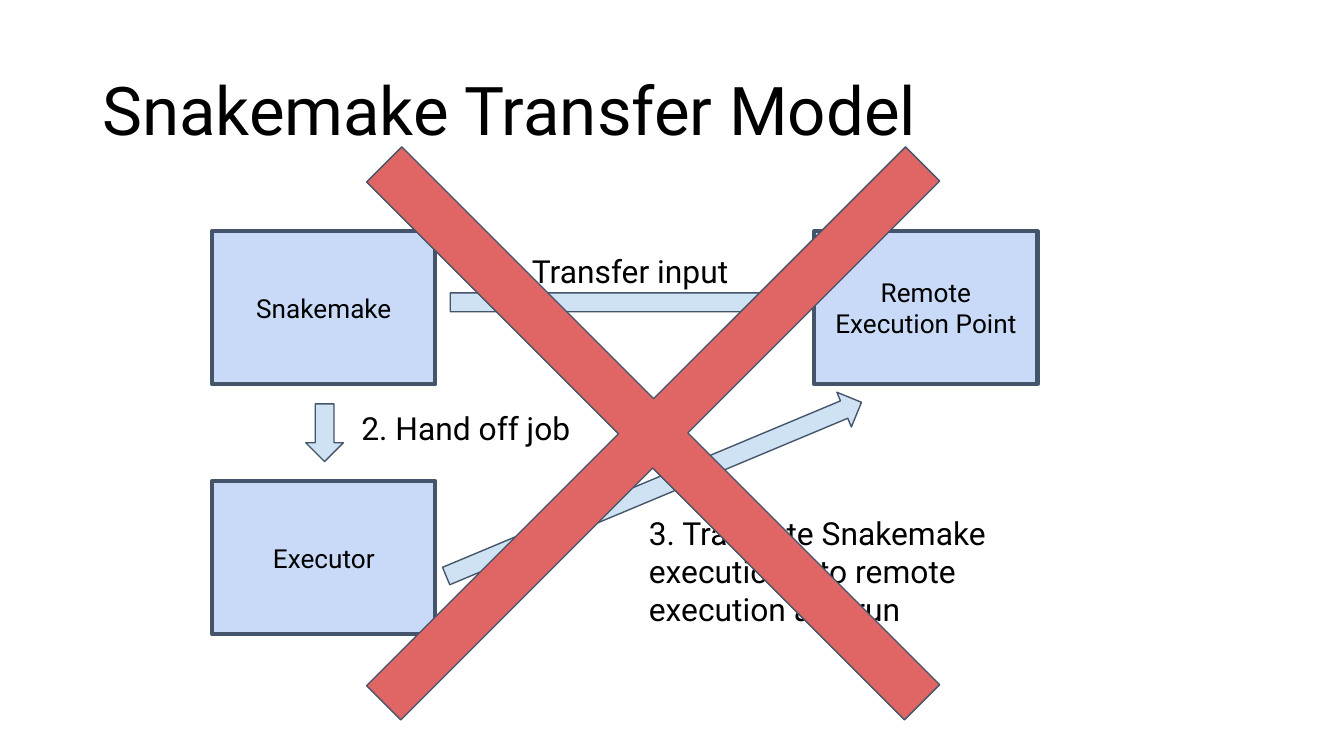
from dataclasses import dataclass

from pptx import Presentation
from pptx.dml.color import RGBColor
from pptx.enum.shapes import MSO_SHAPE
from pptx.enum.text import MSO_ANCHOR, PP_ALIGN
from pptx.util import Inches, Pt

COLORS = {
    "text": "000000",
    "outline": "44546A",
    "component": "C9DAF8",
    "arrow": "CFE2F3",
    "cross": "E06666",
}
FONT = "Roboto"


@dataclass(frozen=True)
class Area:
    left: float
    top: float
    width: float
    height: float

    def lengths(self) -> list:
        return [Inches(v) for v in (self.left, self.top, self.width, self.height)]


@dataclass(frozen=True)
class Figure:
    kind: MSO_SHAPE
    area: Area
    color: str
    rotation: float = 0
    adjustment: float | None = None
    line_width: float = 0.75


@dataclass(frozen=True)
class Label:
    text: str
    area: Area
    size: int = 17
    anchor: MSO_ANCHOR = MSO_ANCHOR.MIDDLE
    inset_x: float = 0.1
    inset_y: float = 0.1
    line_spacing: float = 1.0


def write(shape, text: str, size: int, anchor: MSO_ANCHOR, align: PP_ALIGN,
          inset_x: float = 0.1, inset_y: float = 0.1, line_spacing: float = 1.0) -> None:
    frame = shape.text_frame
    frame.word_wrap = True
    frame.vertical_anchor = anchor
    frame.margin_left = frame.margin_right = Inches(inset_x)
    frame.margin_top = frame.margin_bottom = Inches(inset_y)
    paragraph = frame.paragraphs[0]
    paragraph.alignment = align
    paragraph.line_spacing = line_spacing
    run = paragraph.add_run()
    run.text = text
    run.font.name = FONT
    run.font.size = Pt(size)
    run.font.color.rgb = RGBColor.from_string(COLORS["text"])


def draw_figure(slide, figure: Figure):
    shape = slide.shapes.add_shape(figure.kind, *figure.area.lengths())
    shape.shadow.inherit = False
    shape.rotation = figure.rotation
    shape.fill.solid()
    shape.fill.fore_color.rgb = RGBColor.from_string(COLORS[figure.color])
    shape.line.color.rgb = RGBColor.from_string(COLORS["outline"])
    shape.line.width = Pt(figure.line_width)
    if figure.adjustment is not None:
        shape.adjustments[0] = figure.adjustment
    return shape


def draw_component(slide, name: str, left: float, top: float) -> None:
    box = Figure(MSO_SHAPE.RECTANGLE, Area(left, top, 1.66, 1.14), "component", line_width=2.25)
    write(draw_figure(slide, box), name, 14, MSO_ANCHOR.MIDDLE, PP_ALIGN.CENTER)


def draw_arrow(slide, area: Area, rotation: float = 0) -> None:
    draw_figure(slide, Figure(MSO_SHAPE.RIGHT_ARROW, area, "arrow", rotation))


def draw_cross(slide, area: Area, band: float) -> None:
    notch = (1 - band / area.width) / 2
    draw_figure(slide, Figure(MSO_SHAPE.CROSS, area, "cross", 45, notch))


def draw_label(slide, label: Label) -> None:
    box = slide.shapes.add_textbox(*label.area.lengths())
    write(box, label.text, label.size, label.anchor, PP_ALIGN.LEFT,
          label.inset_x, label.inset_y, label.line_spacing)


def main() -> None:
    presentation = Presentation()
    presentation.slide_width = Inches(10)
    presentation.slide_height = Inches(10 * 9 / 16)
    slide = presentation.slides.add_slide(presentation.slide_layouts[6])

    local_left, remote_left = 1.58, 6.06
    upper_top, lower_top = 1.72, 3.58

    draw_label(slide, Label("Snakemake Transfer Model", Area(0.69, 0.3, 8.62, 1.09), 36,
                            inset_x=0.07, inset_y=0.04, line_spacing=0.9))
    draw_component(slide, "Snakemake", local_left, upper_top)
    draw_component(slide, "Remote Execution Point", remote_left, upper_top)
    draw_arrow(slide, Area(3.35, 2.11, 2.62, 0.28))
    draw_label(slide, Label("1. Transfer input", Area(3.61, 1.77, 2.07, 0.28),
                            anchor=MSO_ANCHOR.TOP))
    draw_component(slide, "Executor", local_left, lower_top)
    draw_arrow(slide, Area(2.2, 3.08, 0.43, 0.28), 90)
    draw_label(slide, Label("2. Hand off job", Area(2.59, 3.01, 2.77, 0.35)))
    draw_arrow(slide, Area(3.19, 3.5, 3.35, 0.28), 337.3)
    draw_label(slide, Label("3. Translate Snakemake execution into remote execution and run",
                            Area(4.73, 3.78, 3.03, 0.94)))
    draw_cross(slide, Area(2.03, 0.39, 5.66, 5.67), 0.36)

    presentation.save("out.pptx")


if __name__ == "__main__":
    main()
